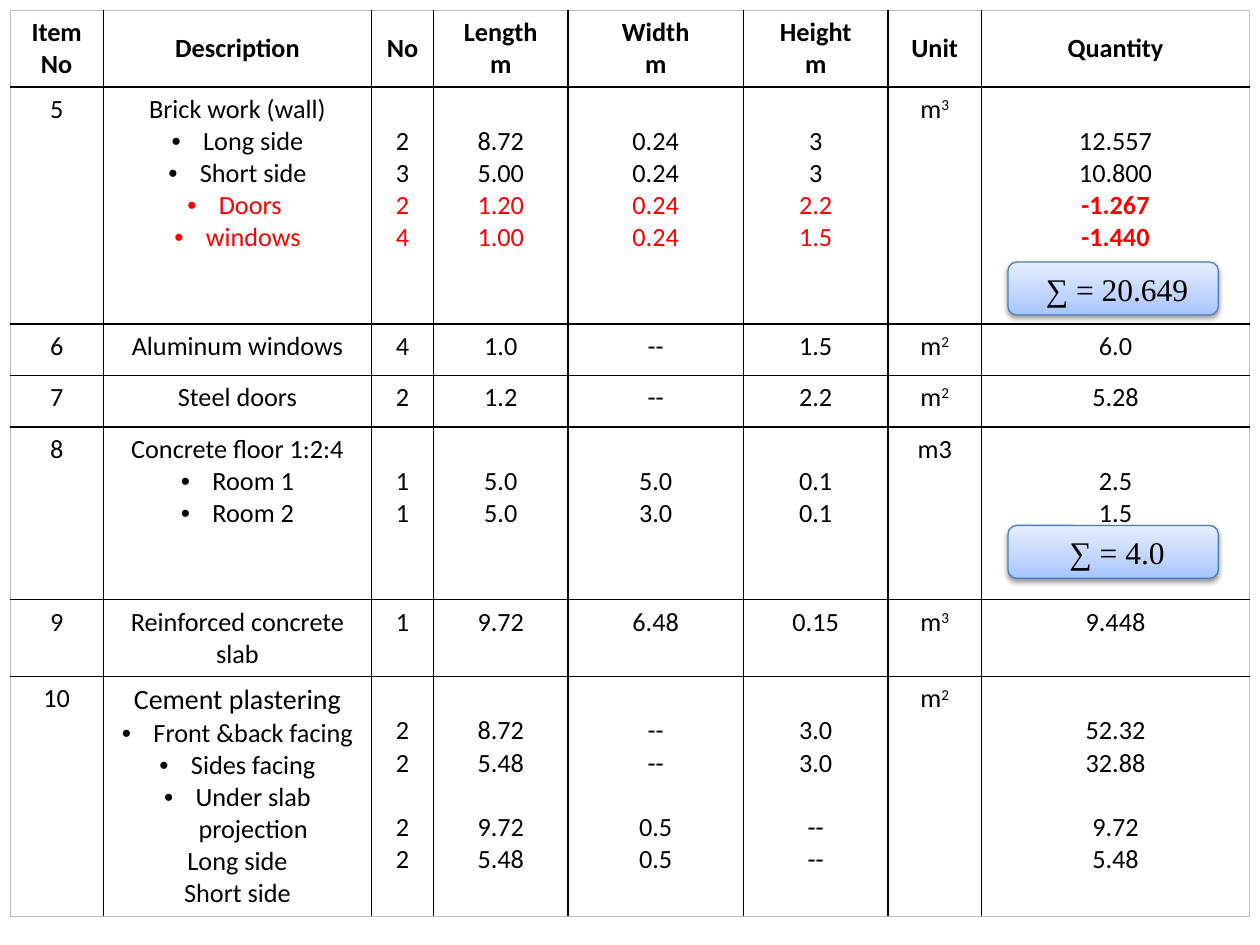
import pptx
import pptx.dml.color
import pptx.enum.shapes
import pptx.enum.text
import pptx.oxml
import pptx.oxml.ns
import pptx.util

Inches = pptx.util.Inches
Pt = pptx.util.Pt
RGBColor = pptx.dml.color.RGBColor
MIDDLE = pptx.enum.text.MSO_ANCHOR.MIDDLE
CENTER = pptx.enum.text.PP_ALIGN.CENTER

BLACK = RGBColor(0x00, 0x00, 0x00)
WHITE = RGBColor(0xFF, 0xFF, 0xFF)
RED = RGBColor(0xFF, 0x00, 0x00)
GREY = RGBColor(0xBF, 0xBF, 0xBF)
TOTAL_EDGE = RGBColor(0x4B, 0x7E, 0xBC)
TOTAL_STOPS = (
    (0, RGBColor(0xA4, 0xC4, 0xFF)),
    (35, RGBColor(0xBF, 0xD4, 0xFF)),
    (100, RGBColor(0xE6, 0xEE, 0xFF)),
)

LINE_HEIGHT = Pt(18.3)
COLUMN_WIDTHS = (0.74, 2.13, 0.49, 1.07, 1.39, 1.15, 0.74, 2.13)
HEADINGS = ("Item No", "Description", "No", "Length\nm", "Width\nm",
            "Height\nm", "Unit", "Quantity")

# Row height and cell texts: an empty line is a gap, "•" a bullet,
# "^" a superscript and "!" a deduction
ITEMS = (
    (0.61, HEADINGS),
    (1.88, ("5", "Brick work (wall)\n•Long side\n•Short side\n!•Doors \n!•windows",
            "\n2\n3\n!2\n!4", "\n8.72\n5.00\n!1.20\n!1.00",
            "\n0.24\n0.24\n!0.24\n!0.24", "\n3\n3\n!2.2\n!1.5", "m^3",
            "\n12.557\n10.800\n!-1.267\n!-1.440")),
    (0.41, ("6", "Aluminum windows", "4", "1.0", "--", "1.5", "m^2", "6.0")),
    (0.41, ("7", "Steel doors", "2", "1.2", "--", "2.2", "m^2", "5.28")),
    (1.37, ("8", "Concrete floor 1:2:4\n•Room 1\n•Room 2", "\n1\n1",
            "\n5.0\n5.0", "\n5.0\n3.0", "\n0.1\n0.1", "m3", "\n2.5\n1.5")),
    (0.61, ("9", "Reinforced concrete slab", "1", "9.72", "6.48", "0.15",
            "m^3", "9.448")),
    (1.9, ("10", "Cement plastering\n•Front &back facing\n•Sides facing\n"
           "•Under slab projection\nLong side\nShort side",
           "\n2\n2\n\n2\n2", "\n8.72\n5.48\n\n9.72\n5.48",
           "\n--\n--\n\n0.5\n0.5", "\n3.0\n3.0\n\n--\n--", "m^2",
           "\n52.32\n32.88\n\n9.72\n5.48")),
)


def xml(text):
    return pptx.oxml.parse_xml(text.replace(">", f" {pptx.oxml.ns.nsdecls('a')}>", 1))


def add_run(paragraph, text, size, font="Calibri", color=BLACK, bold=False):
    run = paragraph.add_run()
    run.text = text
    run.font.size = Pt(size)
    run.font.name = font
    run.font.bold = bold
    run.font.color.rgb = color
    return run


def add_bullet(paragraph):
    properties = paragraph._p.get_or_add_pPr()
    properties.set("marL", str(Inches(0.25)))
    properties.set("indent", str(-Inches(0.25)))
    properties.append(xml('<a:buFont typeface="Arial"></a:buFont>'))
    properties.append(xml('<a:buChar char="•"></a:buChar>'))


def fill_cell(cell, text, is_heading, is_quantity):
    """Write the lines of one cell, turning empty lines into spacing."""
    paragraph, gap = None, False
    for line in text.split("\n"):
        if not line:
            gap = True
            continue
        if paragraph is None:
            paragraph = cell.text_frame.paragraphs[0]
            if gap:
                cell.margin_top = Inches(0.05) + LINE_HEIGHT
        else:
            paragraph = cell.text_frame.add_paragraph()
            if gap:
                paragraph.space_before = LINE_HEIGHT
        gap = False
        paragraph.alignment = CENTER

        deducted = line.startswith("!")
        line = line.lstrip("!")
        if line.startswith("•"):
            add_bullet(paragraph)
        base, _, power = line.lstrip("•").partition("^")
        size = 16 if base == "Cement plastering" else 15
        add_run(paragraph, base, size, color=RED if deducted else BLACK,
                bold=is_heading or (deducted and is_quantity))
        if power:
            raised = add_run(paragraph, power, size)
            raised.font._element.set("baseline", "30000")


def draw_borders(cell, outer_sides):
    """Rule the cell in black, with a fine grey line on the table's edge."""
    properties = cell._tc.get_or_add_tcPr()
    for position, side in enumerate("LRTB"):
        color, width = (GREY, 0.5) if side in outer_sides else (BLACK, 1)
        properties.insert(position, xml(
            f'<a:ln{side} w="{Pt(width)}"><a:solidFill><a:srgbClr val="{color}"/>'
            f'</a:solidFill></a:ln{side}>'))


def add_quantities(slide, left, top, width, height):
    rows, columns = len(ITEMS), len(COLUMN_WIDTHS)
    quantities = slide.shapes.add_table(rows, columns, left, top, width, height).table
    quantities.first_row = False
    quantities.horz_banding = False
    for column, column_width in zip(quantities.columns, COLUMN_WIDTHS):
        column.width = Inches(column_width)
    for r, (row_height, texts) in enumerate(ITEMS):
        quantities.rows[r].height = Inches(row_height)
        for c, text in enumerate(texts):
            cell = quantities.cell(r, c)
            cell.fill.solid()
            cell.fill.fore_color.rgb = WHITE
            if r == 0:
                cell.vertical_anchor = MIDDLE
            fill_cell(cell, text, r == 0, c == columns - 1)
            edges = {"L": c == 0, "R": c == columns - 1, "T": r == 0, "B": r == rows - 1}
            draw_borders(cell, [side for side, outer in edges.items() if outer])


def add_total(slide, left, top, width, height, text):
    """Rounded box with the sum of an item."""
    total = slide.shapes.add_shape(
        pptx.enum.shapes.MSO_SHAPE.ROUNDED_RECTANGLE, left, top, width, height)
    total.line.color.rgb = TOTAL_EDGE
    total.line.width = Pt(0.75)

    # Three-stop gradient and soft shadow
    stops = "".join(f'<a:gs pos="{place * 1000}"><a:srgbClr val="{color}"/></a:gs>'
                    for place, color in TOTAL_STOPS)
    properties = total._element.spPr
    properties.insert(2, xml(f'<a:gradFill rotWithShape="1"><a:gsLst>{stops}</a:gsLst>'
                             '<a:lin ang="16200000" scaled="1"/></a:gradFill>'))
    properties.append(xml(
        f'<a:effectLst><a:outerShdw blurRad="{Pt(3.1)}" dist="{Pt(1.6)}" dir="5400000" '
        f'rotWithShape="0"><a:srgbClr val="{BLACK}"><a:alpha val="38000"/></a:srgbClr>'
        '</a:outerShdw></a:effectLst>'))

    total.text_frame.vertical_anchor = MIDDLE
    paragraph = total.text_frame.paragraphs[0]
    paragraph.alignment = CENTER
    add_run(paragraph, text, 18, "Times New Roman")


def main():
    presentation = pptx.Presentation()
    presentation.slide_width = Inches(10)
    presentation.slide_height = Inches(7.5)
    slide = presentation.slides.add_slide(presentation.slide_layouts[6])
    add_quantities(slide, Inches(0.08), Inches(0.08), Inches(9.84), Inches(7.19))
    for top, text in ((2.08, " ∑ = 20.649"), (4.17, " ∑ = 4.0")):
        add_total(slide, Inches(8), Inches(top), Inches(1.67), Inches(0.42), text)
    presentation.save("out.pptx")


if __name__ == "__main__":
    main()
